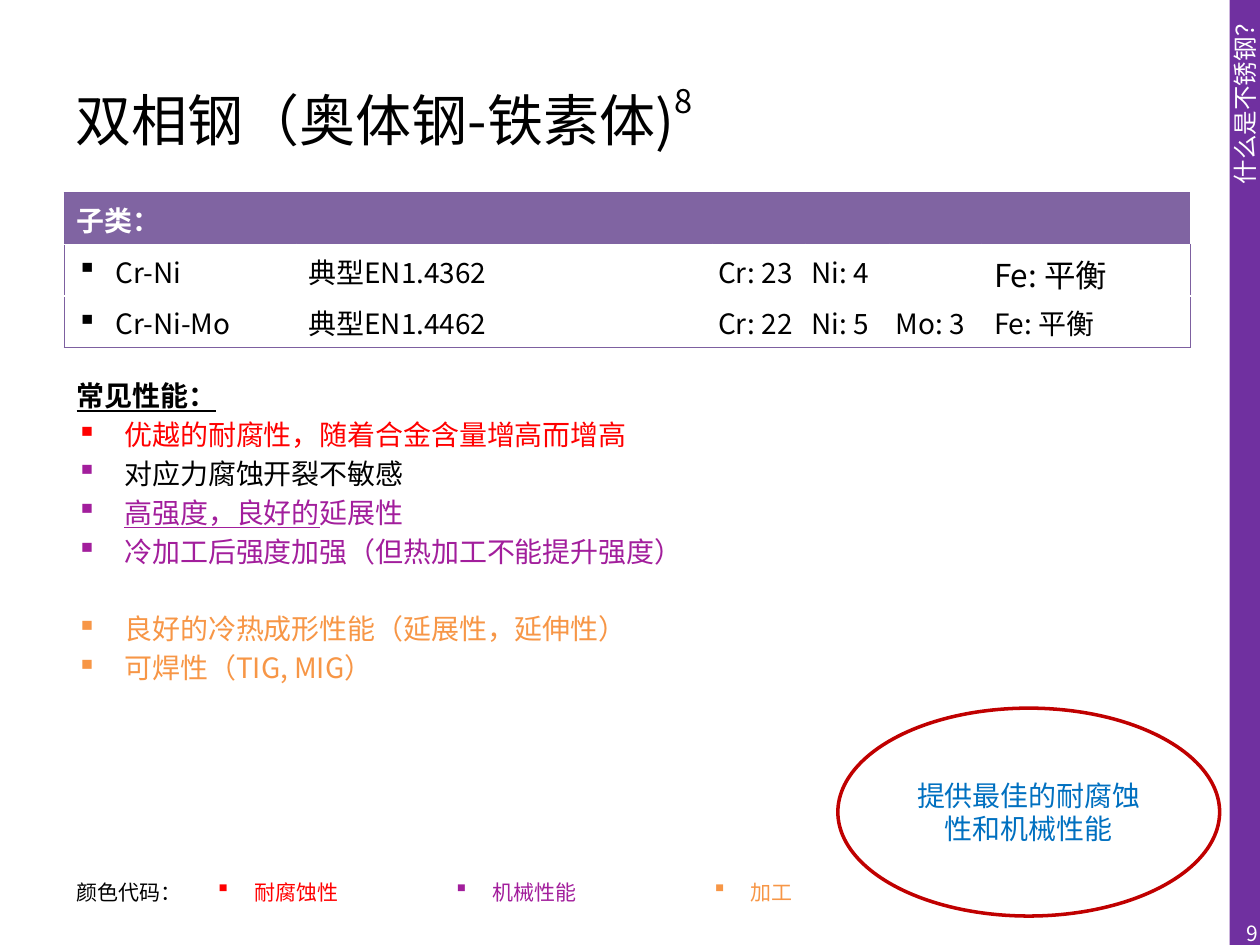
import pptx
import pptx.dml.color
import pptx.enum.shapes
import pptx.enum.text
import pptx.oxml.ns
import pptx.util
from lxml import etree

Inches = pptx.util.Inches
Pt = pptx.util.Pt
RGBColor = pptx.dml.color.RGBColor
ALIGN = pptx.enum.text.PP_ALIGN
ANCHOR = pptx.enum.text.MSO_ANCHOR
SHAPE = pptx.enum.shapes.MSO_SHAPE
qn = pptx.oxml.ns.qn

BLACK = RGBColor(0x00, 0x00, 0x00)
WHITE = RGBColor(0xFF, 0xFF, 0xFF)
BAND_PURPLE = RGBColor(0x70, 0x30, 0xA0)
HEADER_PURPLE = RGBColor(0x80, 0x64, 0xA2)
BORDER_PURPLE = RGBColor(0x7D, 0x60, 0xA0)
CORROSION_RED = RGBColor(0xFF, 0x00, 0x00)
MECHANICAL_PURPLE = RGBColor(0xA2, 0x1E, 0x9C)
FORMING_ORANGE = RGBColor(0xF7, 0x96, 0x46)
OVAL_RED = RGBColor(0xC0, 0x00, 0x00)
OVAL_BLUE = RGBColor(0x00, 0x70, 0xC0)
FONT = "Noto Sans CJK SC"


def add_text(paragraph, text, size=16, color=BLACK, font=FONT, bold=False,
             underline=False, baseline=0):
    run = paragraph.add_run()
    run.text = text
    run.font.size = Pt(size)
    run.font.name = font
    run.font.bold = bold
    run.font.underline = underline
    run.font.color.rgb = color
    properties = run.font._element
    etree.SubElement(properties, qn("a:ea")).set("typeface", FONT)
    if baseline:
        properties.set("baseline", str(baseline * 1000))


def add_bullet(paragraph, indent, color):
    properties = paragraph._p.get_or_add_pPr()
    properties.set("marL", str(Inches(indent)))
    properties.set("indent", str(-Inches(indent)))
    bullet_color = etree.SubElement(properties, qn("a:buClr"))
    etree.SubElement(bullet_color, qn("a:srgbClr")).set("val", str(color))
    etree.SubElement(properties, qn("a:buChar")).set("char", "▪")


class SlideBuilder:
    def __init__(self, slide):
        self.slide = slide

    def text_box(self, left, top, width, height, anchor=ANCHOR.TOP):
        box = self.slide.shapes.add_textbox(
            Inches(left), Inches(top), Inches(width), Inches(height))
        box.text_frame.word_wrap = True
        box.text_frame.vertical_anchor = anchor
        return box.text_frame

    def shape(self, kind, left, top, width, height, fill=None, line=None):
        shape = self.slide.shapes.add_shape(
            kind, Inches(left), Inches(top), Inches(width), Inches(height))
        shape.shadow.inherit = False
        if fill is None:
            shape.fill.background()
        else:
            shape.fill.solid()
            shape.fill.fore_color.rgb = fill
        if line is None:
            shape.line.fill.background()
        else:
            shape.line.color.rgb = line
            shape.line.width = Pt(2)
        shape.text_frame.vertical_anchor = ANCHOR.MIDDLE
        return shape.text_frame

    def table(self, left, top, widths, row_count, row_height=0.41):
        table = self.slide.shapes.add_table(
            row_count, len(widths), Inches(left), Inches(top),
            Inches(sum(widths)), Inches(row_height * row_count)).table
        table.first_row = table.horz_banding = False
        for column, width in zip(table.columns, widths):
            column.width = Inches(width)
        for cell in table.iter_cells():
            cell.fill.background()
        return table

    def outline(self, table, color):
        last_row, last_column = len(table.rows) - 1, len(table.columns) - 1
        for row in range(last_row + 1):
            for column in range(last_column + 1):
                edges = (("a:lnL", column == 0), ("a:lnR", column == last_column),
                         ("a:lnT", row == 0), ("a:lnB", row == last_row))
                properties = table.cell(row, column)._tc.get_or_add_tcPr()
                drawn = [tag for tag, on_edge in edges if on_edge]
                for position, tag in enumerate(drawn):
                    line = etree.Element(qn(tag), w=str(Pt(0.75)))
                    fill = etree.SubElement(line, qn("a:solidFill"))
                    etree.SubElement(fill, qn("a:srgbClr")).set("val", str(color))
                    properties.insert(position, line)


def main():
    presentation = pptx.Presentation()
    presentation.slide_width = Inches(10)
    presentation.slide_height = Inches(7.5)
    slide = presentation.slides.add_slide(presentation.slide_layouts[6])
    builder = SlideBuilder(slide)

    # Side band with the chapter name
    band = builder.shape(SHAPE.RECTANGLE, 9.76, 0, 0.24, 7.5, fill=BAND_PURPLE)
    band._txBody.bodyPr.set("vert", "vert270")
    band.paragraphs[0].alignment = ALIGN.RIGHT
    add_text(band.paragraphs[0], "什么是不锈钢？", size=14, color=WHITE)

    # Title
    title = builder.text_box(0.5, 0.3, 9, 1.25, ANCHOR.MIDDLE).paragraphs[0]
    title.alignment = ALIGN.JUSTIFY
    add_text(title, "双相钢（奥体钢-铁素体)", size=32)
    add_text(title, "8", size=32, baseline=50)

    # Common properties
    properties = builder.text_box(0.51, 2.96, 9, 3.31)
    heading = properties.paragraphs[0]
    heading.line_spacing = Pt(19)
    add_text(heading, "常见性能：", bold=True, underline=True)
    # Bullet colour, space before, runs of (text, colour, underline)
    items = [
        (CORROSION_RED, 3.2,
         [("优越的耐腐性，随着合金含量增高而增高", CORROSION_RED, False)]),
        (MECHANICAL_PURPLE, 3.2, [("对应力腐蚀开裂不敏感", BLACK, False)]),
        (MECHANICAL_PURPLE, 3.2, [("高强度，良好的", MECHANICAL_PURPLE, True),
                                  ("延展性", MECHANICAL_PURPLE, False)]),
        (MECHANICAL_PURPLE, 3.2,
         [("冷加工后强度加强（但热加工不能提升强度）", MECHANICAL_PURPLE, False)]),
        (FORMING_ORANGE, 25.4,
         [("良好的冷热成形性能（延展性，延伸性）", FORMING_ORANGE, False)]),
        (FORMING_ORANGE, 3.2, [("可焊性（TIG, MIG）", FORMING_ORANGE, False)]),
    ]
    for bullet_color, space, runs in items:
        paragraph = properties.add_paragraph()
        paragraph.line_spacing = Pt(19)
        paragraph.space_before = Pt(space)
        add_bullet(paragraph, 0.38, bullet_color)
        for text, color, underline in runs:
            add_text(paragraph, text, color=color, underline=underline)

    # Slide number
    number = builder.text_box(9.65, 7.21, 0.43, 0.4, ANCHOR.MIDDLE).paragraphs[0]
    number.alignment = ALIGN.RIGHT
    add_text(number, "9", size=12, color=WHITE)

    # Subclass table
    grades = builder.table(0.51, 1.53, [1.84, 3.3, 0.74, 0.67, 0.73, 1.66], 3)
    header = grades.cell(0, 0)
    header.merge(grades.cell(0, 5))
    header.fill.solid()
    header.fill.fore_color.rgb = HEADER_PURPLE
    add_text(header.text_frame.paragraphs[0], "子类：", color=WHITE, bold=True)
    rows = [["Cr-Ni", "典型EN1.4362", "Cr: 23", "Ni: 4", "", "Fe: 平衡"],
            ["Cr-Ni-Mo", "典型EN1.4462", "Cr: 22", "Ni: 5", "Mo: 3", "Fe: 平衡"]]
    for row, texts in enumerate(rows, start=1):
        for column, text in enumerate(texts):
            cell = grades.cell(row, column)
            paragraph = cell.text_frame.paragraphs[0]
            if column == 0:
                add_bullet(paragraph, 0.31, BLACK)
            if column in (2, 3, 4):
                cell.margin_left = cell.margin_right = Inches(0.05)
            if text:
                add_text(paragraph, text, size=18 if (row, column) == (1, 5) else 16)
    builder.outline(grades, BORDER_PURPLE)

    # Colour legend
    legend = builder.table(0.51, 6.9, [1.1, 1.89, 2.05, 3.46], 1)
    entries = [("颜色代码：", BLACK), ("耐腐蚀性", CORROSION_RED),
               ("机械性能", MECHANICAL_PURPLE), ("加工", FORMING_ORANGE)]
    for column, (text, color) in enumerate(entries):
        paragraph = legend.cell(0, column).text_frame.paragraphs[0]
        if column > 0:
            add_bullet(paragraph, 0.31, color)
        add_text(paragraph, text, size=12, color=color, font="Calibri")

    # Conclusion oval
    oval = builder.shape(SHAPE.OVAL, 6.65, 5.62, 3.03, 1.65, line=OVAL_RED)
    oval.word_wrap = True
    conclusion = oval.paragraphs[0]
    conclusion.alignment = ALIGN.CENTER
    conclusion.line_spacing = Pt(19)
    add_text(conclusion, "提供最佳的耐腐蚀性和机械性能", color=OVAL_BLUE)

    presentation.save("out.pptx")


if __name__ == "__main__":
    main()
